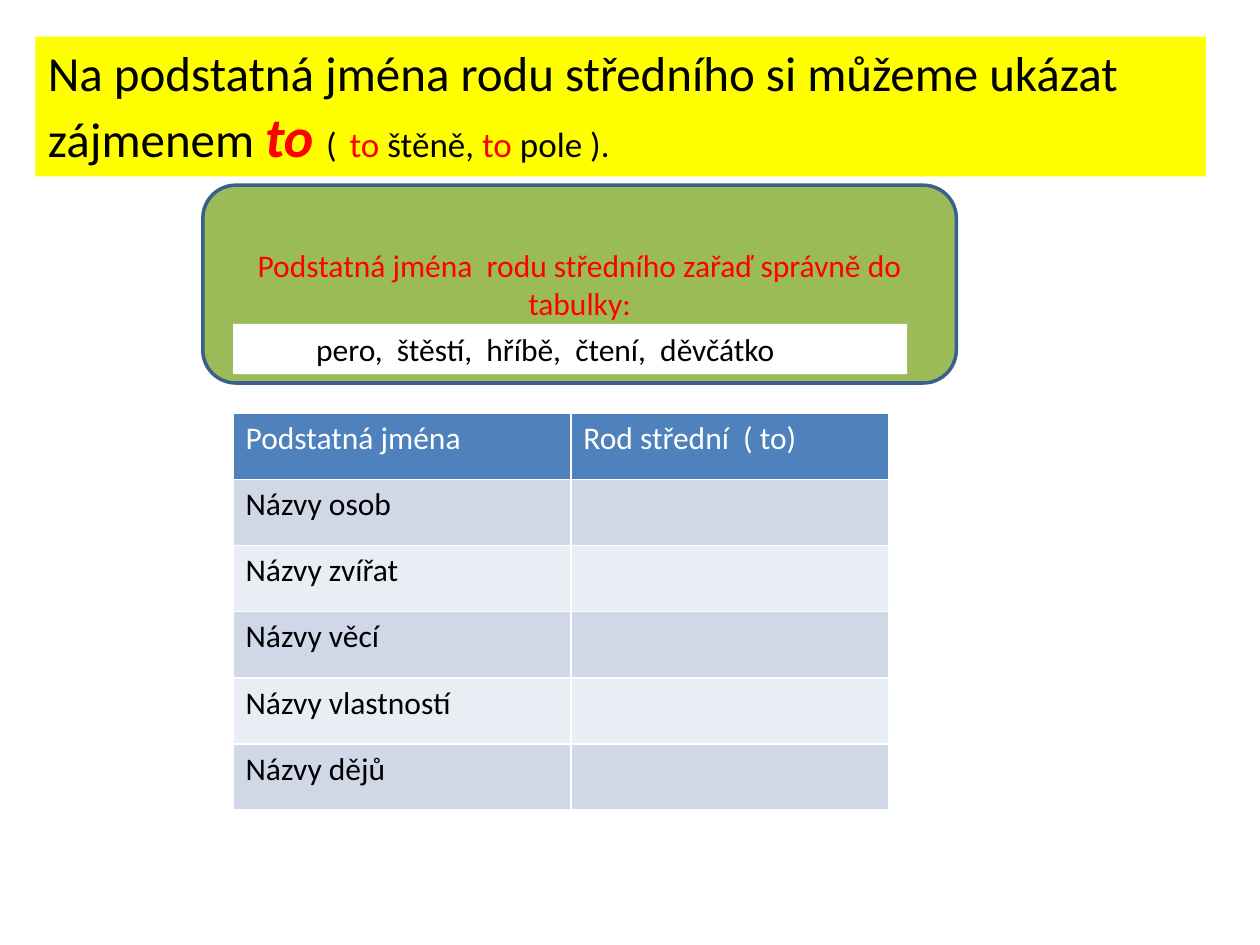
from pptx import Presentation
from pptx.dml.color import RGBColor
from pptx.enum.shapes import MSO_SHAPE
from pptx.enum.text import MSO_ANCHOR, MSO_AUTO_SIZE, PP_ALIGN
from pptx.util import Inches, Pt

BLACK, WHITE, RED = "000000", "FFFFFF", "FF0000"


def rgb(value):
    return RGBColor.from_string(value)


def box(*lengths):
    return [Inches(n) for n in lengths]


class SlideBuilder:
    font = {"name": "Calibri", "size": Pt(18), "bold": False, "italic": False}

    def __init__(self, slide):
        self.s = slide

    def add_runs(self, tf, runs, align=PP_ALIGN.LEFT, **frame):
        for name, value in frame.items():
            setattr(tf, name, value)
        p = tf.paragraphs[0]
        p.alignment = align
        for text, color, fmt in runs:
            r = p.add_run()
            r.text = text
            for name, value in {**self.font, **fmt}.items():
                setattr(r.font, name, value)
            r.font.color.rgb = rgb(color)

    def fill(self, target, color):
        target.fill.solid()
        target.fill.fore_color.rgb = rgb(color)

    def title(self, at, color, runs):
        sp = self.s.shapes.title
        sp.left, sp.top, sp.width, sp.height = box(*at)
        self.fill(sp, color)
        self.add_runs(sp.text_frame, runs, word_wrap=True,
                      auto_size=MSO_AUTO_SIZE.NONE, vertical_anchor=MSO_ANCHOR.TOP)

    def panel(self, at, color, line, runs):
        sp = self.s.shapes.add_shape(MSO_SHAPE.ROUNDED_RECTANGLE, *box(*at))
        sp.shadow.inherit = False
        self.fill(sp, color)
        sp.line.color.rgb = rgb(line)
        sp.line.width = Pt(2)
        self.add_runs(sp.text_frame, runs, PP_ALIGN.CENTER,
                      word_wrap=True, vertical_anchor=MSO_ANCHOR.MIDDLE)

    def text(self, at, color, runs, margin):
        sp = self.s.shapes.add_textbox(*box(*at))
        self.fill(sp, color)
        self.add_runs(sp.text_frame, runs, word_wrap=True, margin_left=Inches(margin))

    def table(self, at, widths, rows, head, bands):
        table = self.s.shapes.add_table(len(rows), len(widths), *box(*at)).table
        for column, width in zip(table.columns, widths):
            column.width = Inches(width)
        for i, row in enumerate(rows):
            for j, text in enumerate(row):
                cell = table.cell(i, j)
                self.fill(cell, bands[(i - 1) % 2] if i else head)
                if text:
                    self.add_runs(cell.text_frame, [(text, BLACK if i else WHITE, {})])


def main():
    prs = Presentation()
    prs.slide_width, prs.slide_height = box(10, 7.5)
    b = SlideBuilder(prs.slides.add_slide(prs.slide_layouts[5]))

    small = {"size": Pt(20)}
    large = {"size": Pt(32)}
    b.title((0.28, 0.29, 9.29, 1.11), "FFFF00", [
        ("Na podstatná jména rodu středního si můžeme ukázat zájmenem ",
         BLACK, {"size": Pt(28)}),
        ("to ", RED, {**large, "bold": True, "italic": True}),
        ("(", BLACK, small),
        (" ", BLACK, large),
        ("to ", RED, small),
        ("štěně, ", BLACK, small),
        ("to ", RED, small),
        ("pole ).", BLACK, small),
    ])
    b.panel((1.61, 1.47, 5.98, 1.57), "9BBB59", "3A5F8C", [
        ("Podstatná jména  rodu středního zařaď správně do tabulky:", RED, {})])
    b.text((1.85, 2.57, 5.35, 0.4), WHITE, [
        ("pero,  štěstí,  hříbě,  čtení,  děvčátko", BLACK, {})], margin=0.66)

    groups = ["osob", "zvířat", "věcí", "vlastností", "dějů"]
    rows = [("Podstatná jména", "Rod střední  ( to)")]
    rows += [(f"Názvy {group}", "") for group in groups]
    b.table((1.85, 3.28, 5.2, 3.15), (2.68, 2.52), rows,
            "4F81BD", ("D0D8E8", "E9EDF4"))
    prs.save("out.pptx")


if __name__ == "__main__":
    main()
